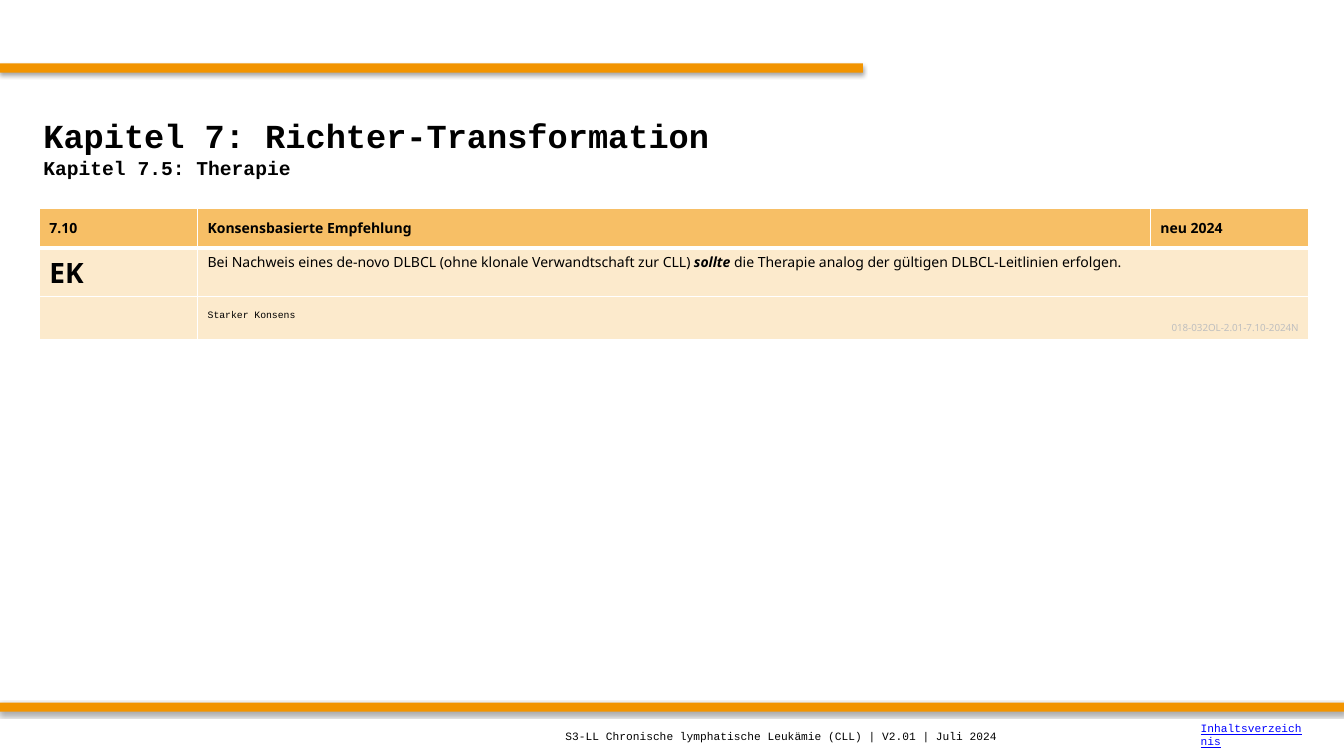
from lxml import etree
from pptx import Presentation
from pptx.dml.color import RGBColor
from pptx.enum.shapes import MSO_SHAPE
from pptx.enum.text import MSO_ANCHOR, PP_ALIGN
from pptx.oxml.ns import qn
from pptx.util import Inches, Pt

RECT = MSO_SHAPE.RECTANGLE
TOP, MIDDLE, BOTTOM = MSO_ANCHOR.TOP, MSO_ANCHOR.MIDDLE, MSO_ANCHOR.BOTTOM
LEFT, RIGHT = PP_ALIGN.LEFT, PP_ALIGN.RIGHT

ORANGE = RGBColor(0xF2, 0x94, 0x00)
HEADER = RGBColor(0xF7, 0xBF, 0x66)
CREAM = RGBColor(0xFC, 0xEA, 0xCC)
BLACK = RGBColor(0, 0, 0)
GREY = RGBColor(0xBF, 0xBF, 0xBF)
LINK = RGBColor(0, 0, 0xFF)
MONO, SANS = "Courier New", "Noto Sans"


def fmt(size, name=SANS, color=BLACK, **more):
    return {"size": Pt(size), "name": name, "color": color, **more}


BODY, BOLD = fmt(10), fmt(10, bold=True)

# A paragraph is (alignment, [(text, format), ...])
TITLE = [
    (LEFT, [("Kapitel 7: Richter-Transformation", fmt(24, MONO, bold=True))]),
    (LEFT, [("Kapitel 7.5: Therapie", fmt(14, MONO, bold=True))]),
]
FOOTERS = [
    ((5.51, 7.11, 5.51, 0.39),
     "S3-LL Chronische lymphatische Leukämie (CLL) | V2.01 | Juli 2024", fmt(8, MONO)),
    ((11.81, 7.09, 1.22, 0.39), "Inhaltsverzeichnis", fmt(8, MONO, LINK, underline=True)),
]
BARS = [(0, 0.63, 8.56, 0.09), (0, 6.97, 13.33, 0.09)]

COLUMNS = [1.57, 9.45, 1.57]
ROWS = [0.39, 0.47, 0.43]
# (row, column): (anchor, paragraphs)
CELLS = {
    (0, 0): (MIDDLE, [(LEFT, [("7.10", BOLD)])]),
    (0, 1): (MIDDLE, [(LEFT, [("Konsensbasierte Empfehlung", BOLD)])]),
    (0, 2): (MIDDLE, [(LEFT, [("neu 2024", BOLD)])]),
    (1, 0): (TOP, [(LEFT, [("EK", fmt(20, bold=True))])]),
    (1, 1): (TOP, [(LEFT, [
        ("Bei Nachweis eines de-novo DLBCL (ohne klonale Verwandtschaft zur CLL) ", BODY),
        ("sollte", fmt(10, bold=True, italic=True)),
        (" die Therapie analog der gültigen DLBCL-Leitlinien erfolgen.", BODY),
    ])]),
    (2, 1): (BOTTOM, [
        (LEFT, [("Starker Konsens", fmt(7, MONO))]),
        (RIGHT, [("018-032OL-2.01-7.10-2024N", fmt(7, SANS, GREY))]),
    ]),
}


def write(tf, paragraphs):
    for i, (align, runs) in enumerate(paragraphs):
        p = tf.paragraphs[0] if i == 0 else tf.add_paragraph()
        p.alignment = align
        p.space_before = Pt(0)
        for text, values in runs:
            r = p.add_run()
            r.text = text
            for key, value in values.items():
                if key == "color":
                    r.font.color.rgb = value
                else:
                    setattr(r.font, key, value)


def add_bar(s, box):
    bar = s.shapes.add_shape(RECT, *map(Inches, box))
    bar.fill.solid()
    bar.fill.fore_color.rgb = ORANGE
    bar.line.fill.background()
    bar.shadow.inherit = False
    effects = bar._element.spPr.find(qn("a:effectLst"))
    shadow = etree.SubElement(effects, qn("a:outerShdw"), blurRad=str(Pt(3.1)),
                              dist=str(Pt(1.8)), dir="5400000", rotWithShape="0")
    black = etree.SubElement(shadow, qn("a:srgbClr"), val="000000")
    etree.SubElement(black, qn("a:alpha"), val="35000")


def set_borders(cell, widths):
    """Draw white left, right, top and bottom borders, widths in points."""
    tc_pr = cell._tc.get_or_add_tcPr()
    for side, width in zip("LRTB", widths):
        line = etree.SubElement(tc_pr, qn(f"a:ln{side}"), w=str(Pt(width)))
        fill = etree.SubElement(line, qn("a:solidFill"))
        etree.SubElement(fill, qn("a:srgbClr"), val="FFFFFF")


def add_recommendation(s):
    frame = s.shapes.add_table(len(ROWS), len(COLUMNS), Inches(0.39), Inches(2.07),
                               Inches(sum(COLUMNS)), Inches(sum(ROWS)))
    table = frame.table
    table.horz_banding = False
    for column, width in zip(table.columns, COLUMNS):
        column.width = Inches(width)
    for row, height in zip(table.rows, ROWS):
        row.height = Inches(height)
    for i in range(len(ROWS)):
        for j in range(len(COLUMNS)):
            cell = table.cell(i, j)
            set_borders(cell, (1, 1, 3 if i == 1 else 1, 3 if i == 0 else 1))
            cell.fill.solid()
            cell.fill.fore_color.rgb = CREAM if i else HEADER
            if (i, j) in CELLS:
                anchor, paragraphs = CELLS[i, j]
                cell.vertical_anchor = anchor
                write(cell.text_frame, paragraphs)
        if i:
            table.cell(i, 1).merge(table.cell(i, 2))


def main():
    prs = Presentation()
    prs.slide_width, prs.slide_height = Inches(13.33), Inches(7.5)
    s = prs.slides.add_slide(prs.slide_layouts[5])

    for box in BARS:
        add_bar(s, box)

    title = s.shapes.title
    title.left, title.top, title.width, title.height = map(Inches, (0.33, 0.83, 12.67, 1.17))
    tf = title.text_frame
    tf.vertical_anchor = MIDDLE
    tf.margin_top = Inches(0.14)
    write(tf, TITLE)

    add_recommendation(s)

    for box, text, values in FOOTERS:
        tf = s.shapes.add_textbox(*map(Inches, box)).text_frame
        tf.word_wrap = True
        tf.vertical_anchor = MIDDLE
        write(tf, [(LEFT, [(text, values)])])

    prs.save("out.pptx")


if __name__ == "__main__":
    main()
